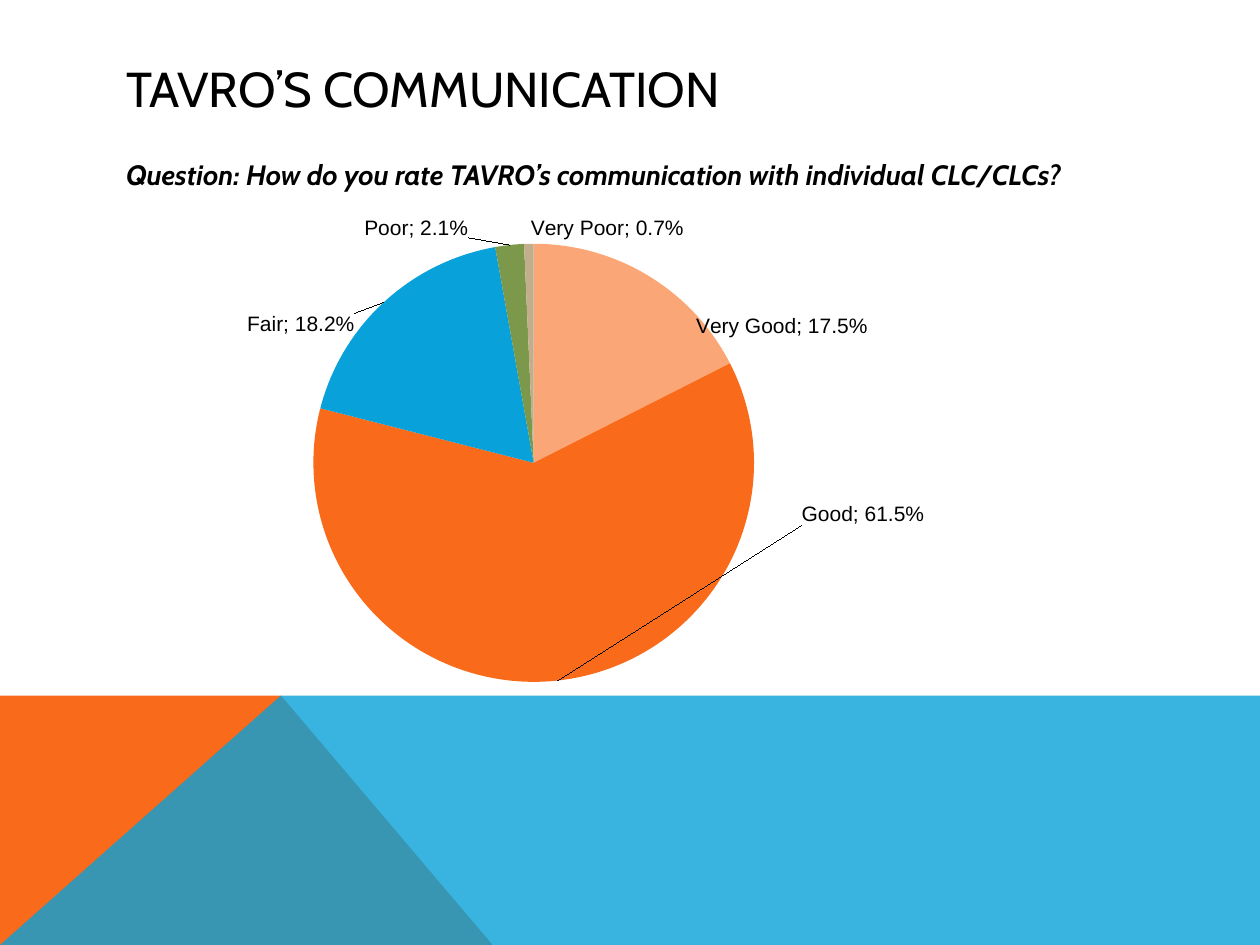
from lxml.etree import SubElement
from pptx import Presentation
from pptx.chart.data import CategoryChartData
from pptx.dml.color import RGBColor
from pptx.enum.chart import XL_CHART_TYPE as ChartType, XL_LABEL_POSITION as LabelPosition
from pptx.enum.text import MSO_ANCHOR as Anchor, MSO_AUTO_SIZE as AutoSize, PP_ALIGN as Align
from pptx.oxml import parse_xml
from pptx.oxml.ns import nsdecls, qn
from pptx.util import Inches, Pt

COLORS = {"black": "000000", "orange": "F96A1B", "blue": "08A1D9",
          "peach": "FBA676", "green": "7C984A", "tan": "C2AD8D"}

TITLE = "TAVRO’S COMMUNICATION"
QUESTION = "Question: How do you rate TAVRO’s communication with individual CLC/CLCs?"

# answer, share, colour, label shift as a fraction of the chart
RATINGS = [
    ("Very Good", 0.175, "peach", (0.048, 0.135)),
    ("Good", 0.615, "orange", (0.269, -0.367)),
    ("Fair", 0.182, "blue", (-0.027, 0.077)),
    ("Poor", 0.021, "green", (-0.045, 0)),
    ("Very Poor", 0.007, "tan", (0.087, 0.004)),
]
PLOT_AREA = {"x": 0.048, "y": 0.053, "w": 0.723, "h": 0.87}

# outline points in inches, colour, opacity in percent
BANDS = [
    ([(0, 7.5), (0, 5.52), (2.23, 5.52), (3.91, 7.5)], "orange", 100),
    ([(0, 7.5), (2.23, 5.52), (10, 5.52), (10, 7.5)], "blue", 80),
]


def rgb(name):
    return RGBColor.from_string(COLORS[name])


def format_font(font, size, name="Cabin", bold=False, italic=False):
    font.size, font.name, font.bold, font.italic = Pt(size), name, bold, italic
    font.color.rgb = rgb("black")


def fill_placeholder(shape, text, box, anchor=Anchor.TOP, space_before=0, **font_format):
    shape.left, shape.top, shape.width, shape.height = map(Inches, box)
    frame = shape.text_frame
    frame.text = text
    frame.auto_size, frame.word_wrap = AutoSize.NONE, True
    frame.vertical_anchor = anchor
    paragraph = frame.paragraphs[0]
    paragraph.alignment = Align.LEFT
    paragraph.space_before = Pt(space_before)
    properties = paragraph._p.get_or_add_pPr()
    properties.set("marL", "0")
    properties.set("indent", "0")
    SubElement(properties, qn("a:buNone"))
    format_font(paragraph.runs[0].font, **font_format)


def add_band(slide, points, color, opacity):
    corners = [(Inches(x), Inches(y)) for x, y in points]
    builder = slide.shapes.build_freeform(*corners[0])
    builder.add_line_segments(corners[1:], close=True)
    band = builder.convert_to_shape()
    band.shadow.inherit = False
    band.line.fill.background()
    band.fill.solid()
    band.fill.fore_color.rgb = rgb(color)
    if opacity < 100:
        color_element = band.element.spPr.find(".//" + qn("a:srgbClr"))
        SubElement(color_element, qn("a:alpha")).set("val", str(opacity * 1000))
    return band


def manual_layout(inner=False, **values):
    target = '<c:layoutTarget val="inner"/>' if inner else ""
    modes = '<c:xMode val="edge"/><c:yMode val="edge"/>' if inner else ""
    sizes = "".join(f'<c:{key} val="{value}"/>' for key, value in values.items())
    return parse_xml(f'<c:layout {nsdecls("c")}><c:manualLayout>{target}{modes}{sizes}'
                     "</c:manualLayout></c:layout>")


def format_label(label, shift):
    label.position = LabelPosition.OUTSIDE_END
    format_font(label.font, 12, "Arial")
    element = label._dLbl
    index = element.find(qn("c:idx"))
    index.addnext(parse_xml(f'<c:numFmt {nsdecls("c")} formatCode="0.0%" sourceLinked="0"/>'))
    index.addnext(manual_layout(x=shift[0], y=shift[1]))
    element.find(qn("c:showCatName")).set("val", "1")
    SubElement(element, qn("c:separator")).text = "; "


def add_ratings_pie(slide, box):
    data = CategoryChartData(number_format="0.0%")
    data.categories = [rating[0] for rating in RATINGS]
    data.add_series("Series 1", [rating[1] for rating in RATINGS])
    chart = slide.shapes.add_chart(ChartType.PIE, *map(Inches, box), data).chart
    chart.has_legend = chart.has_title = False
    format_font(chart.font, 10)
    plot = chart.plots[0]
    plot.vary_by_categories = True
    for number, (_, _, color, shift) in enumerate(RATINGS):
        point = plot.series[0].points[number]
        point.format.fill.solid()
        point.format.fill.fore_color.rgb = rgb(color)
        format_label(point.data_label, shift)
    plot_area = chart.element.find(".//" + qn("c:plotArea"))
    for layout in plot_area.findall(qn("c:layout")):
        plot_area.remove(layout)
    plot_area.insert(0, manual_layout(inner=True, **PLOT_AREA))


def main():
    presentation = Presentation()
    presentation.slide_width, presentation.slide_height = Inches(10), Inches(7.5)
    slide = presentation.slides.add_slide(presentation.slide_layouts[1])
    title, question = slide.shapes.title, slide.placeholders[1]

    # Coloured bands behind everything else
    for points, color, opacity in BANDS:
        band = add_band(slide, points, color, opacity)
        title.element.addprevious(band.element)

    # Heading and question
    fill_placeholder(title, TITLE, (0.9, 0.4, 8.23, 0.6), anchor=Anchor.MIDDLE, size=28)
    fill_placeholder(question, QUESTION, (0.9, 1.2, 7.96, 0.66), space_before=8,
                     size=16, bold=True, italic=True)

    # Answers
    add_ratings_pie(slide, (1.3, 1.7, 7.17, 4.02))
    presentation.save("out.pptx")


if __name__ == "__main__":
    main()
